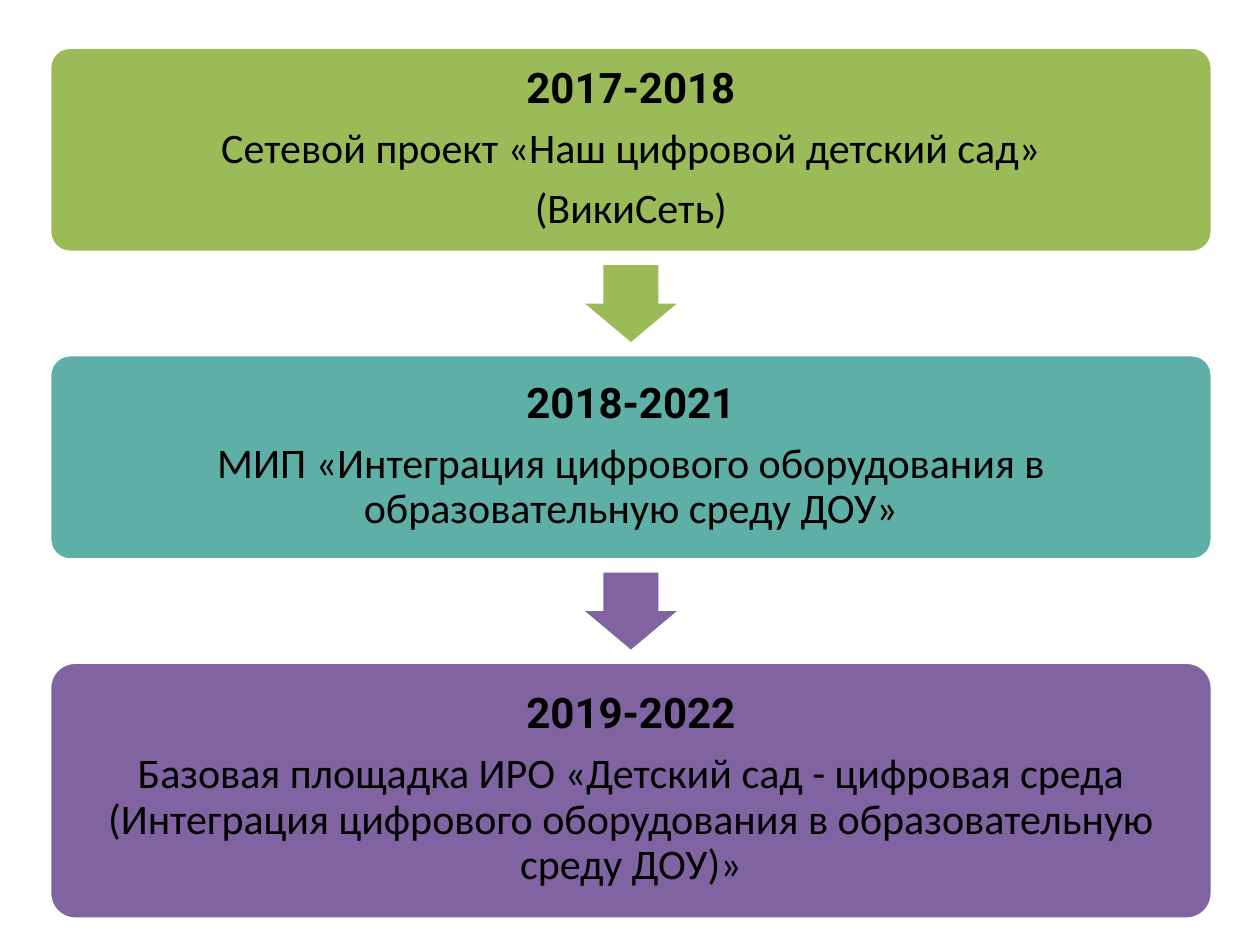
from pptx import Presentation
from pptx.dml.color import RGBColor
from pptx.enum.shapes import MSO_SHAPE
from pptx.enum.text import MSO_ANCHOR, PP_ALIGN
from pptx.util import Cm, Pt

ROUND = MSO_SHAPE.ROUNDED_RECTANGLE
DOWN = MSO_SHAPE.DOWN_ARROW
MIDDLE = MSO_ANCHOR.MIDDLE
CENTER = PP_ALIGN.CENTER

COLORS = {
    "green": "9BBB59",
    "teal": "5EAFA6",
    "violet": "8064A2",
    "white": "FFFFFF",
    "black": "000000",
}

# Stage: colour, height in cm, years, lines of text
STAGES = [
    ("green", 4.14, "2017-2018",
     ["Сетевой проект «Наш цифровой детский сад»", "(ВикиСеть)"]),
    ("teal", 4.14, "2018-2021",
     ["МИП «Интеграция цифрового оборудования в образовательную среду ДОУ»"]),
    ("violet", 5.18, "2019-2022",
     ["Базовая площадка ИРО «Детский сад - цифровая среда "
      "(Интеграция цифрового оборудования в образовательную среду ДОУ)»"]),
]
LEFT, TOP, WIDTH, GAP = 1, 0.95, 23.44, 2.06


def color(name):
    return RGBColor.from_string(COLORS[name])


def add_text(para, text, font="Calibri", size=24, bold=False, tint="black"):
    para.alignment = CENTER
    para.line_spacing = 0.9
    para.space_after = Pt(8.4)
    run = para.add_run()
    run.text = text
    run.font.name = font
    run.font.size = Pt(size)
    run.font.bold = bold
    run.font.color.rgb = color(tint)


def add_solid(slide, kind, box, tint, ratios):
    shape = slide.shapes.add_shape(kind, *(Cm(n) for n in box))
    shape.shadow.inherit = False
    shape.fill.solid()
    shape.fill.fore_color.rgb = color(tint)
    shape.line.fill.background()
    for i, ratio in enumerate(ratios):
        shape.adjustments[i] = ratio
    return shape


def add_stage(slide, box, tint, years, lines):
    card = add_solid(slide, ROUND, box, tint, [0.1])
    card.line.color.rgb = color("white")
    card.line.width = Pt(2)
    frame = card.text_frame
    frame.word_wrap = True
    frame.vertical_anchor = MIDDLE
    frame.margin_left = frame.margin_right = Cm(0.25)
    frame.margin_top = frame.margin_bottom = Cm(0.25)
    add_text(frame.paragraphs[0], years, font="Roboto", bold=True)
    for line in lines:
        add_text(frame.add_paragraph(), line)


def add_arrow(slide, box, tint):
    # Centred in the gap between two stages
    left, top, width, height = box
    wide, high = 1.85, 1.55
    spot = (left + (width - wide) / 2, top + (height - high) / 2, wide, high)
    add_solid(slide, DOWN, spot, tint, [0.6, 0.5])


def main():
    deck = Presentation()
    deck.slide_width, deck.slide_height = Cm(25.4), Cm(19.05)
    slide = deck.slides.add_slide(deck.slide_layouts[6])

    # Stages from top to bottom, with an arrow in each gap
    arrows = ["green", "violet"]
    top = TOP
    for i, (tint, height, years, lines) in enumerate(STAGES):
        add_stage(slide, (LEFT, top, WIDTH, height), tint, years, lines)
        top += height
        if i < len(arrows):
            add_arrow(slide, (LEFT, top, WIDTH, GAP), arrows[i])
        top += GAP

    deck.save("out.pptx")


if __name__ == "__main__":
    main()
